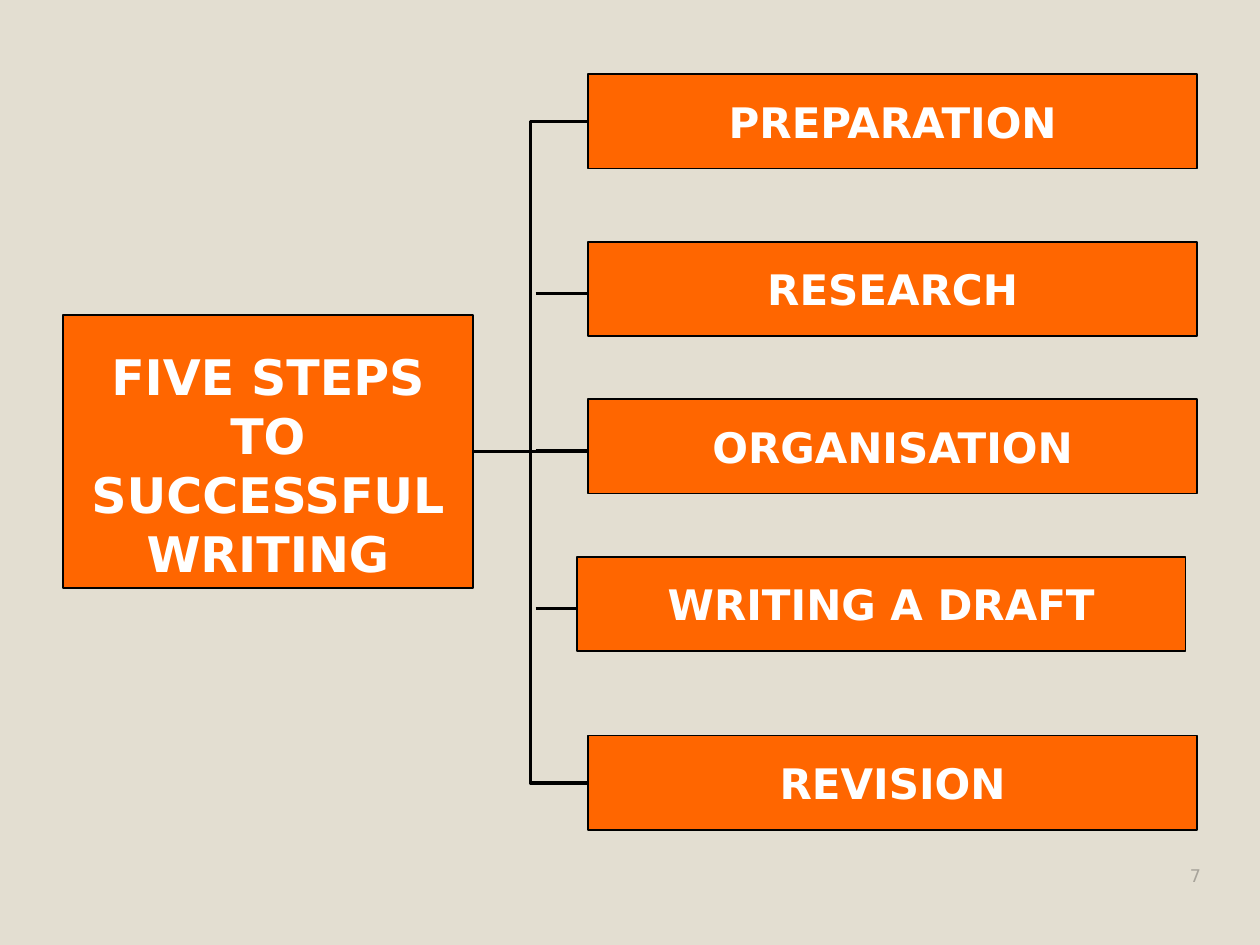
"""Build the slide that charts five steps to successful writing."""
import dataclasses

import pptx
import pptx.dml.color
import pptx.enum.shapes
import pptx.enum.text
import pptx.oxml.ns
import pptx.util
from lxml import etree

Cm = pptx.util.Cm
ALIGN = pptx.enum.text.PP_ALIGN
ANCHOR = pptx.enum.text.MSO_ANCHOR
LINK = pptx.enum.shapes.MSO_CONNECTOR


@dataclasses.dataclass(frozen=True)
class Theme:
    font: str = "DejaVu Sans"
    back: str = "E3DED1"
    fill: str = "FF6600"
    ink: str = "000000"
    light: str = "FFFFFF"
    faint: str = "A8A49B"
    head: int = 28
    body: int = 24
    small: int = 10
    edge: int = 1
    wire: int = 2


def shade(code):
    return pptx.dml.color.RGBColor.from_string(code)


def write(frame, text, *, font, size, color, bold=False, align=ALIGN.CENTER,
          anchor=ANCHOR.MIDDLE, wrap=True):
    frame.auto_size = pptx.enum.text.MSO_AUTO_SIZE.NONE
    frame.word_wrap = wrap
    frame.vertical_anchor = anchor
    frame.margin_left = frame.margin_right = Cm(0.25)
    frame.margin_top = frame.margin_bottom = Cm(0.13)
    para = frame.paragraphs[0]
    para.alignment = align
    run = para.add_run()
    run.text = text
    run.font.name = font
    run.font.size = pptx.util.Pt(size)
    run.font.bold = bold
    run.font.color.rgb = shade(color)


class Chart:
    def __init__(self, theme, slide):
        self.theme = theme
        self.slide = slide
        slide.background.fill.solid()
        slide.background.fill.fore_color.rgb = shade(theme.back)

    def paint(self, shape):
        shape.fill.solid()
        shape.fill.fore_color.rgb = shade(self.theme.fill)
        self.stroke(shape, self.theme.edge)

    def stroke(self, shape, width):
        shape.line.color.rgb = shade(self.theme.ink)
        shape.line.width = pptx.util.Pt(width)

    def title(self, text, left, top, width, height):
        shape = self.slide.shapes.title
        shape.left, shape.top = Cm(left), Cm(top)
        shape.width, shape.height = Cm(width), Cm(height)
        self.paint(shape)
        write(shape.text_frame, text, font=self.theme.font, size=self.theme.head,
              color=self.theme.light, bold=True, anchor=ANCHOR.BOTTOM)
        return shape

    def step(self, text, left, top, width, height):
        kind = pptx.enum.shapes.MSO_SHAPE.RECTANGLE
        shape = self.slide.shapes.add_shape(
            kind, Cm(left), Cm(top), Cm(width), Cm(height))
        shape.shadow.inherit = False
        self.paint(shape)
        write(shape.text_frame, text, font=self.theme.font, size=self.theme.body,
              color=self.theme.light, bold=True, wrap=False)
        return shape

    def line(self, start, end, kind=LINK.STRAIGHT):
        wire = self.slide.shapes.add_connector(
            kind, *(Cm(value) for value in (*start, *end)))
        self.stroke(wire, self.theme.wire)
        props = wire._element.spPr
        etree.SubElement(props, pptx.oxml.ns.qn("a:effectLst"))
        return wire

    def label(self, text, left, top, width, height):
        shape = self.slide.shapes.add_textbox(
            Cm(left), Cm(top), Cm(width), Cm(height))
        write(shape.text_frame, text, font=self.theme.font, size=self.theme.small,
              color=self.theme.faint, align=ALIGN.RIGHT, anchor=ANCHOR.BOTTOM)


def main():
    deck = pptx.Presentation()
    deck.slide_width, deck.slide_height = Cm(25.4), Cm(19.05)
    chart = Chart(Theme(), deck.slides.add_slide(deck.slide_layouts[5]))

    left, top, width, height = 1.27, 6.35, 8.26, 5.51
    root = chart.title("FIVE STEPS TO SUCCESSFUL WRITING", left, top, width, height)
    start = (left + width, top + height / 2)
    spine, drop = 10.8, 1.04
    wide, high = 12.27, 1.9

    outer = (("PREPARATION", 11.86, 1.5), ("REVISION", 11.86, 14.83))
    inner = (("RESEARCH", 11.86, 4.88), ("ORGANISATION", 11.86, 8.05),
             ("WRITING A DRAFT", 11.63, 11.23))

    for text, x, y in outer:
        box = chart.step(text, x, y, wide, high)
        wire = chart.line(start, (x, y + high / 2), LINK.ELBOW)
        wire.begin_connect(root, 3)
        wire.end_connect(box, 1)

    for text, x, y in inner:
        chart.step(text, x, y, wide, high)
        chart.line((spine, y + drop), (x, y + drop))

    trunk = chart.line(start, (spine, start[1]))
    trunk.begin_connect(root, 3)

    chart.label("7", 23.19, 16.97, 1.27, 1.02)
    deck.save("out.pptx")


if __name__ == "__main__":
    main()
